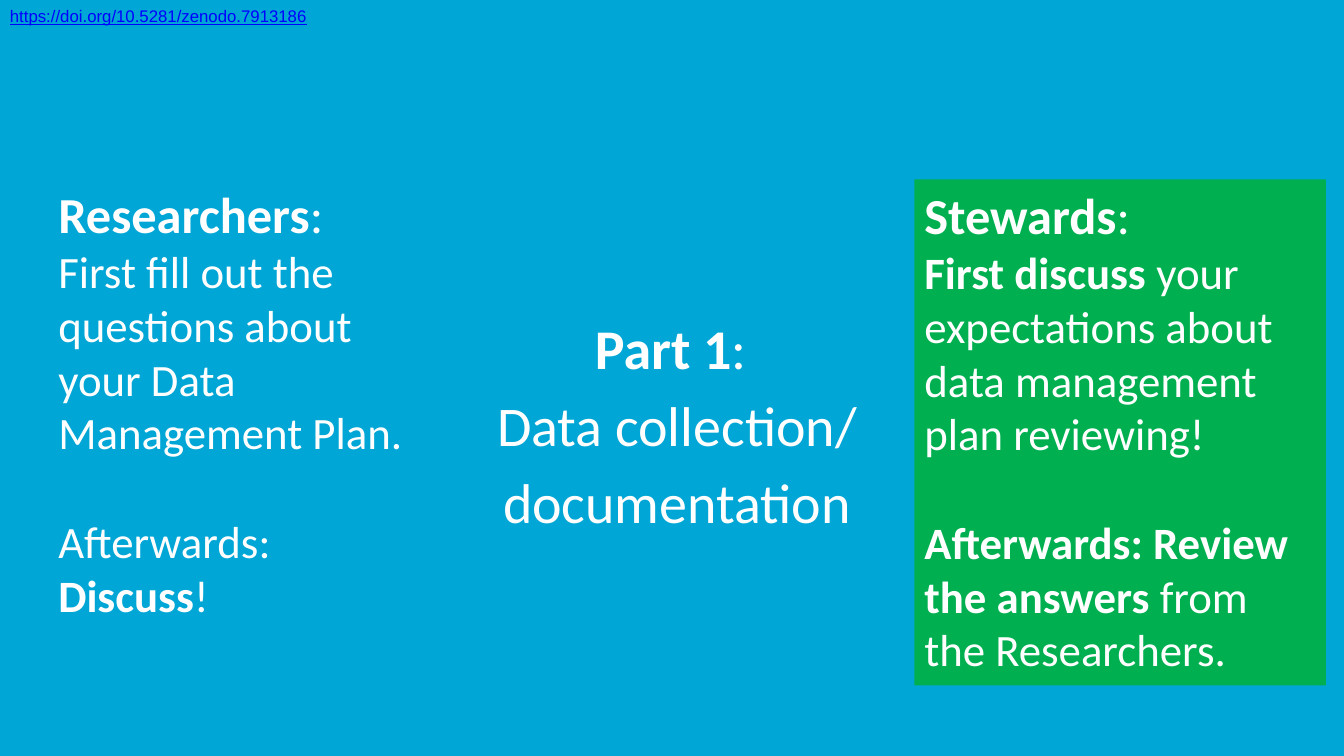
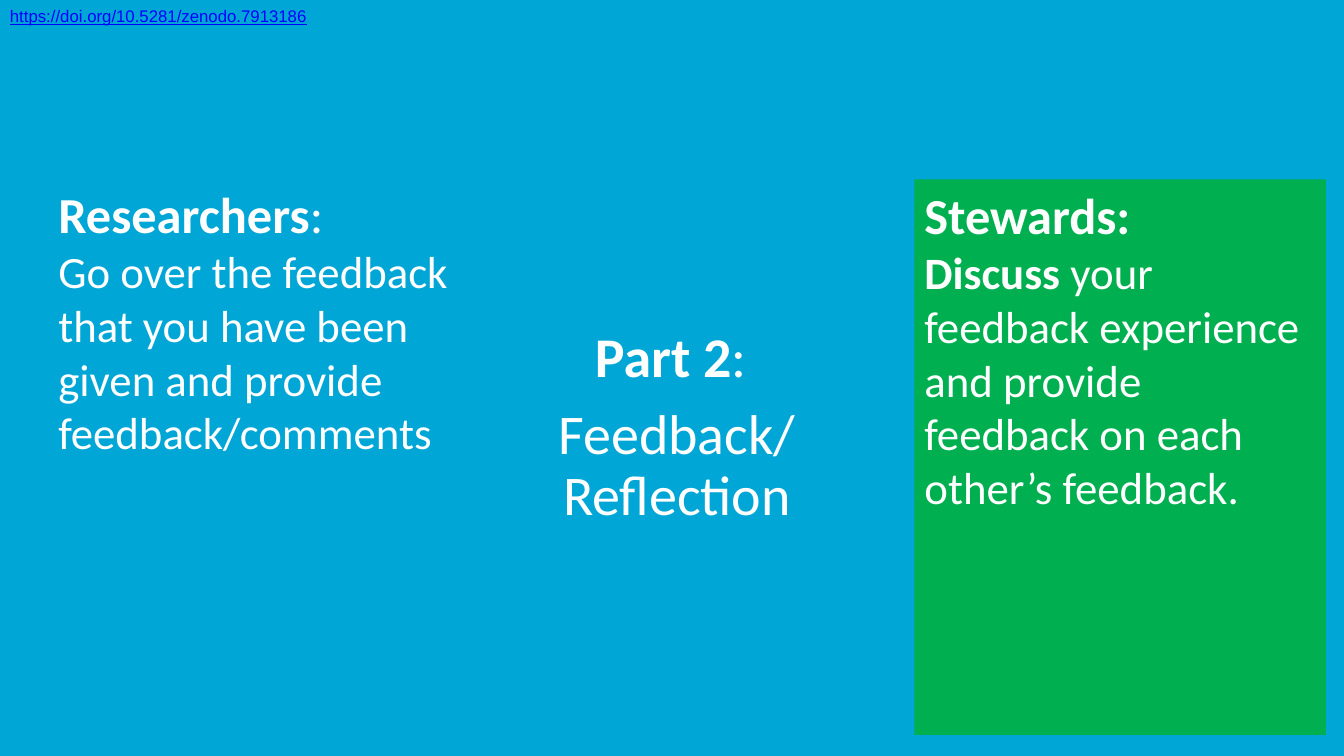
from dataclasses import dataclass

from pptx import Presentation
from pptx.dml.color import RGBColor as RGB
from pptx.enum.shapes import MSO_SHAPE as Shape
from pptx.enum.text import MSO_ANCHOR as Anchor, MSO_AUTO_SIZE as Fit, PP_ALIGN as Align
from pptx.util import Inches, Pt


@dataclass(frozen=True)
class Theme:
    """Colours, fonts and type sizes of the deck."""
    blue: RGB = RGB(0x00, 0xA6, 0xD6)
    green: RGB = RGB(0x00, 0xB0, 0x50)
    white: RGB = RGB(0xFF, 0xFF, 0xFF)
    link: RGB = RGB(0x00, 0x00, 0xFF)
    font: str = "Calibri"
    plain: str = "Arial"
    title: int = 40
    head: int = 36
    body: int = 32
    note: int = 12
    gap: int = 39


THEME = Theme()
SOURCE = "https://doi.org/10.5281/zenodo.7913186"

PARTS = [
    {
        "title": ["*Part 1*: ", "Data collection/", "documentation"],
        "left": ["*Researchers*:",
                 "First fill out the questions about your Data Management Plan.",
                 "Afterwards: *Discuss*!"],
        "right": ["*Stewards*:",
                  "*First discuss* your expectations about data management plan reviewing!",
                  "*Afterwards: Review the answers* from the Researchers."],
        "wide": 3.86,
        "tall": 5.02,
    },
    {
        "title": ["*Part 2*: ", "Feedback/\nReflection"],
        "left": ["*Researchers*:",
                 "Go over the feedback that you have been given and provide feedback/comments"],
        "right": ["*Stewards:*",
                  "*Discuss* your feedback experience and provide feedback on each other’s feedback."],
        "wide": 4.08,
        "tall": 5.51,
    },
]


def style(run, size, color, font=THEME.font, bold=False):
    """Set the look of a run."""
    face = run.font
    face.name, face.size, face.bold = font, Pt(size), bold
    face.color.rgb = color


def write(para, text, size):
    """Fill a paragraph, with the words between stars in bold."""
    for i, part in enumerate(text.split("*")):
        for j, line in enumerate(part.split("\n")):
            if j:
                para.add_line_break()
            if line:
                run = para.add_run()
                run.text = line
                style(run, size, THEME.white, bold=i % 2 == 1)


def lines(frame, texts):
    """Yield each text with its index and paragraph."""
    for i, text in enumerate(texts):
        yield i, text, frame.add_paragraph() if i else frame.paragraphs[0]


def place(shape, box):
    """Move a shape to a box given in inches."""
    shape.left, shape.top, shape.width, shape.height = map(Inches, box)


def add_title(slide, texts, box):
    """Set the centred part title."""
    title = slide.shapes.title
    place(title, box)
    frame = title.text_frame
    frame.word_wrap, frame.auto_size = True, Fit.NONE
    frame.vertical_anchor = Anchor.MIDDLE
    frame.margin_left = frame.margin_right = 0
    frame.margin_top = frame.margin_bottom = 0
    for i, text, para in lines(frame, texts):
        para.alignment, para.line_spacing = Align.CENTER, 0.9
        para.space_before = Pt(12 if i else 0)
        write(para, text, THEME.title)


def add_card(slide, texts, box, fill):
    """Draw a card with the tasks of one group."""
    card = slide.shapes.add_shape(Shape.RECTANGLE, *map(Inches, box))
    card.shadow.inherit = False
    card.fill.solid()
    card.fill.fore_color.rgb = fill
    card.line.fill.background()
    frame = card.text_frame
    frame.word_wrap, frame.vertical_anchor = True, Anchor.TOP
    for i, text, para in lines(frame, texts):
        para.alignment = Align.LEFT
        para.space_before = Pt(THEME.gap if i > 1 else 0)
        write(para, text, THEME.body if i else THEME.head)


def add_source(slide, box):
    """Write the source address in the corner."""
    frame = slide.shapes.add_textbox(*map(Inches, box)).text_frame
    frame.word_wrap = True
    frame.text = SOURCE
    run = frame.paragraphs[0].runs[0]
    style(run, THEME.note, THEME.link, THEME.plain)
    run.font.underline = True


def add_part(deck, part):
    """Build the slide of one part."""
    slide = deck.slides.add_slide(deck.slide_layouts.get_by_name("Title Only"))
    add_title(slide, part["title"], (4.36, 1.56, 4.71, 5.38))
    add_card(slide, part["left"], (0.48, 1.77, part["wide"], 5.43), THEME.blue)
    add_card(slide, part["right"], (9.07, 1.78, 4.08, part["tall"]), THEME.green)
    add_source(slide, (0, 0.01, 3.59, 0.3))


def main():
    """Build and save the deck."""
    deck = Presentation()
    deck.slide_width, deck.slide_height = Inches(13.33), Inches(7.5)
    back = deck.slide_master.background.fill
    back.solid()
    back.fore_color.rgb = THEME.blue
    for part in PARTS:
        add_part(deck, part)
    deck.save("out.pptx")


if __name__ == "__main__":
    main()
